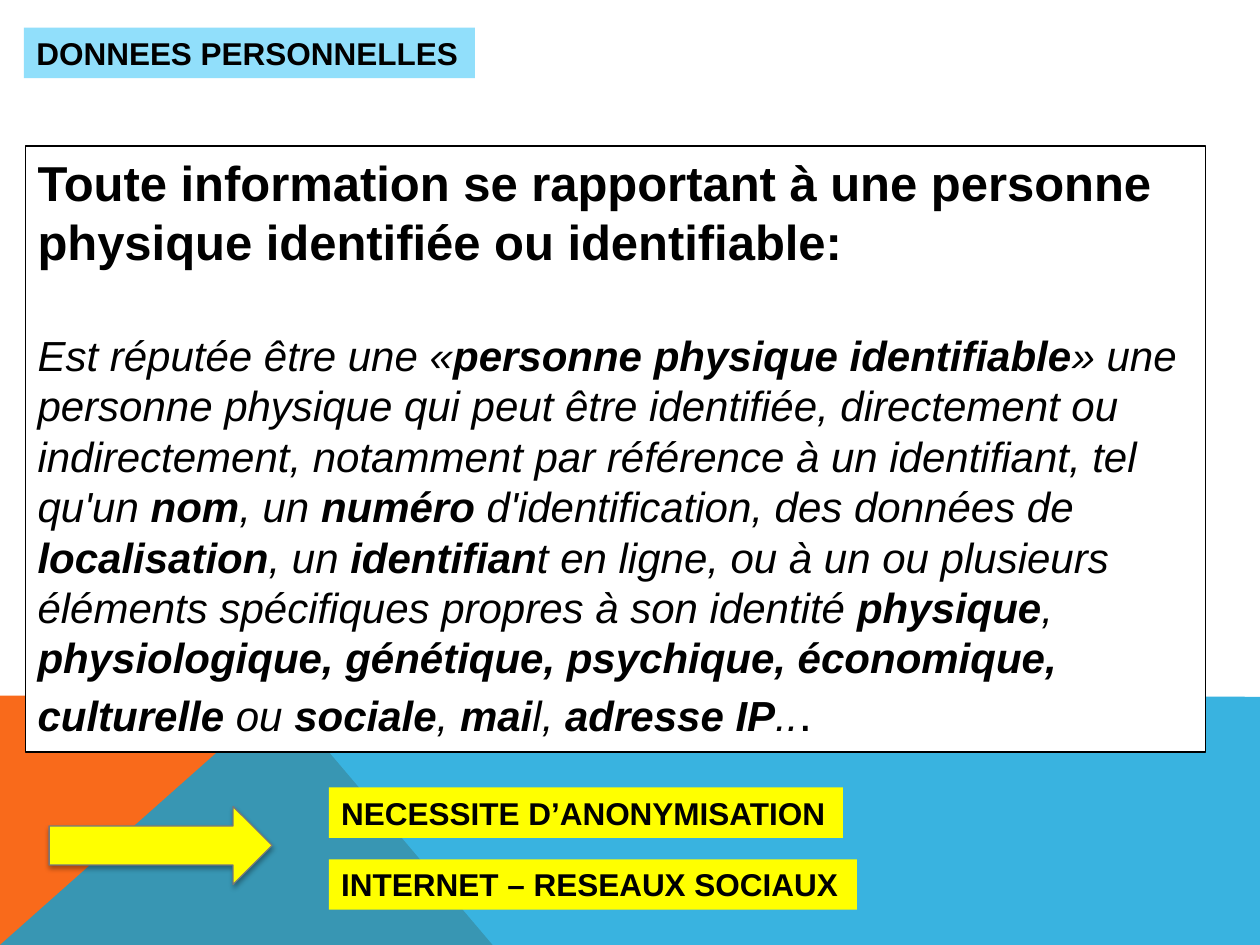
from dataclasses import dataclass

from lxml import etree
from pptx import Presentation
from pptx.dml.color import RGBColor
from pptx.enum.shapes import MSO_SHAPE
from pptx.enum.text import MSO_AUTO_SIZE
from pptx.oxml import parse_xml
from pptx.oxml.ns import nsdecls, qn
from pptx.util import Inches, Pt

RIGHT_ARROW = MSO_SHAPE.RIGHT_ARROW
FIT_SHAPE = MSO_AUTO_SIZE.SHAPE_TO_FIT_TEXT


@dataclass(frozen=True)
class Theme:
    font: str = "Arial"
    black: RGBColor = RGBColor(0x00, 0x00, 0x00)
    white: RGBColor = RGBColor(0xFF, 0xFF, 0xFF)
    orange: RGBColor = RGBColor(0xF9, 0x6A, 0x1B)
    blue: RGBColor = RGBColor(0x08, 0xA1, 0xD9)
    light_blue: RGBColor = RGBColor(0x91, 0xDF, 0xFB)
    yellow: RGBColor = RGBColor(0xFF, 0xFF, 0x00)
    grey: RGBColor = RGBColor(0x76, 0x78, 0x7B)
    label_size: int = 18
    heading_size: int = 28
    body_size: int = 24
    line_width: float = 0.75
    body_gap: int = 34


@dataclass(frozen=True)
class Label:
    text: str
    left: float
    top: float
    width: float
    fill: RGBColor


@dataclass(frozen=True)
class Band:
    points: tuple
    fill: RGBColor
    opacity: int = 100


THEME = Theme()
LABEL_HEIGHT = 0.4

BANDS = [
    Band(((0, 7.5), (0, 5.52), (2.23, 5.52), (3.91, 7.5)), THEME.orange),
    Band(((0, 7.5), (2.23, 5.52), (10, 5.53), (10, 7.5)), THEME.blue, 80),
]

LABELS = [
    Label("DONNEES PERSONNELLES", 0.19, 0.22, 3.58, THEME.light_blue),
    Label("NECESSITE D’ANONYMISATION", 2.61, 6.25, 4.08, THEME.yellow),
    Label("INTERNET – RESEAUX SOCIAUX", 2.61, 6.82, 4.19, THEME.yellow),
]

HEADING = ("Toute information se rapportant à une personne physique "
           "identifiée ou identifiable:")

BOLD_MARK = "*"
DEFINITION = (
    "Est réputée être une «*personne physique identifiable*» une personne "
    "physique qui peut être identifiée, directement ou indirectement, "
    "notamment par référence à un identifiant, tel qu'un *nom*, un *numéro* "
    "d'identification, des données de *localisation*, un *identifian*t en "
    "ligne, ou à un ou plusieurs éléments spécifiques propres à son identité "
    "*physique*, *physiologique, génétique, psychique, économique, "
    "culturelle *ou *sociale*, *mai*l, *adresse IP*.."
)


def set_fill(s, color: RGBColor) -> None:
    s.fill.solid()
    s.fill.fore_color.rgb = color


def set_line(s, color: RGBColor) -> None:
    s.line.color.rgb = color
    s.line.width = Pt(THEME.line_width)


def set_font(font, size: int, bold: bool, italic: bool = False) -> None:
    font.name = THEME.font
    font.size = Pt(size)
    font.bold = bold
    font.italic = italic
    font.color.rgb = THEME.black


def add_band(slide, band: Band) -> None:
    points = [(Inches(x), Inches(y)) for x, y in band.points]
    builder = slide.shapes.build_freeform(*points[0])
    builder.add_line_segments(points[1:], close=True)
    s = builder.convert_to_shape()
    s.shadow.inherit = False
    set_fill(s, band.fill)
    s.line.fill.background()
    if band.opacity < 100:
        color = s.fill._xPr.find(qn("a:solidFill"))[0]
        etree.SubElement(color, qn("a:alpha"), val=str(band.opacity * 1000))


def add_label(slide, label: Label) -> None:
    s = slide.shapes.add_textbox(Inches(label.left), Inches(label.top),
                                 Inches(label.width), Inches(LABEL_HEIGHT))
    set_fill(s, label.fill)
    tf = s.text_frame
    tf.word_wrap = False
    tf.auto_size = FIT_SHAPE
    p = tf.paragraphs[0]
    p.text = label.text
    set_font(p.font, THEME.label_size, True)


def add_definition(slide) -> None:
    s = slide.shapes.add_textbox(Inches(0.2), Inches(1.16),
                                 Inches(9.37), Inches(4.81))
    set_fill(s, THEME.white)
    set_line(s, THEME.black)
    tf = s.text_frame
    tf.word_wrap = True
    tf.auto_size = FIT_SHAPE

    p = tf.paragraphs[0]
    p.text = HEADING
    set_font(p.font, THEME.heading_size, True)

    p = tf.add_paragraph()
    p.space_before = Pt(THEME.body_gap)
    for i, part in enumerate(DEFINITION.split(BOLD_MARK)):
        r = p.add_run()
        r.text = part
        set_font(r.font, THEME.body_size, i % 2 == 1, True)
    r = p.add_run()
    r.text = "."
    set_font(r.font, THEME.heading_size, False)


def add_arrow(slide) -> None:
    s = slide.shapes.add_shape(RIGHT_ARROW, Inches(0.39), Inches(6.4),
                               Inches(1.77), Inches(0.62))
    set_fill(s, THEME.yellow)
    set_line(s, THEME.grey)
    s._element.spPr.append(parse_xml(
        f'<a:effectLst {nsdecls("a")}>'
        f'<a:outerShdw blurRad="{Pt(3.1)}" dist="{Pt(1.8)}" dir="5400000" '
        f'rotWithShape="0"><a:srgbClr val="{THEME.black}">'
        '<a:alpha val="35000"/></a:srgbClr></a:outerShdw></a:effectLst>'))


def main() -> None:
    prs = Presentation()
    prs.slide_width = Inches(10)
    prs.slide_height = Inches(7.5)
    slide = prs.slides.add_slide(prs.slide_layouts[6])
    set_fill(slide.background, THEME.white)
    for band in BANDS:
        add_band(slide, band)
    add_definition(slide)
    add_arrow(slide)
    for label in LABELS:
        add_label(slide, label)
    prs.save("out.pptx")


if __name__ == "__main__":
    main()
